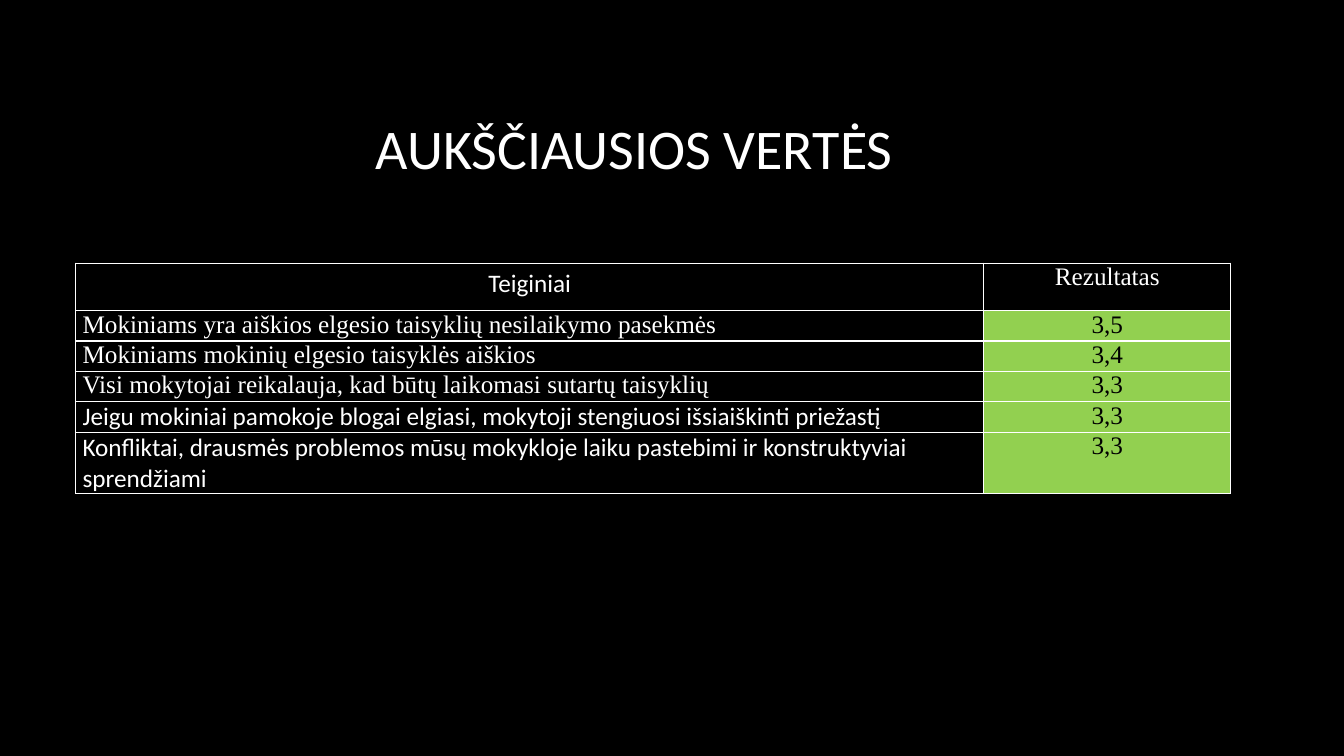
from lxml import etree
from pptx import Presentation
from pptx.dml.color import RGBColor
from pptx.enum.text import MSO_ANCHOR, PP_ALIGN
from pptx.oxml.ns import qn
from pptx.util import Pt

LEFT, CENTER = PP_ALIGN.LEFT, PP_ALIGN.CENTER
TOP, MIDDLE = MSO_ANCHOR.TOP, MSO_ANCHOR.MIDDLE

BLACK = RGBColor(0x00, 0x00, 0x00)
WHITE = RGBColor(0xFF, 0xFF, 0xFF)
GREEN = RGBColor(0x92, 0xD0, 0x50)

SANS, SERIF = "Calibri", "Times New Roman"

# Statement, its font, result, row height
RESULTS = [
    ("Mokiniams yra aiškios elgesio taisyklių nesilaikymo pasekmės", SERIF, "3,5", 19.9),
    ("Mokiniams mokinių elgesio taisyklės aiškios", SERIF, "3,4", 19.9),
    ("Visi mokytojai reikalauja, kad būtų laikomasi sutartų taisyklių", SERIF, "3,3", 19.9),
    ("Jeigu mokiniai pamokoje blogai elgiasi, mokytoji stengiuosi išsiaiškinti priežastį",
     SANS, "3,3", 21.9),
    ("Konfliktai, drausmės problemos mūsų mokykloje laiku pastebimi ir konstruktyviai "
     "sprendžiami", SANS, "3,3", 43.9),
]
HEADER_HEIGHT = 34
COLUMN_WIDTHS = (648.75, 176.5)


def write_text(text_frame, text, *, font=SANS, size=18, color=WHITE, align=LEFT):
    paragraph = text_frame.paragraphs[0]
    paragraph.alignment = align
    run = paragraph.add_run()
    run.text = text
    run.font.name = font
    run.font.size = Pt(size)
    run.font.color.rgb = color


class SlideBuilder:
    def __init__(self, slide, border_color=WHITE, border_width=1):
        self.slide = slide
        self.border_color = border_color
        self.border_width = border_width

    def background(self, color):
        fill = self.slide.background.fill
        fill.solid()
        fill.fore_color.rgb = color

    def title(self, text, left, top, width, height):
        shape = self.slide.shapes.add_textbox(Pt(left), Pt(top), Pt(width), Pt(height))
        text_frame = shape.text_frame
        text_frame.word_wrap = True
        text_frame.vertical_anchor = MIDDLE
        write_text(text_frame, text, size=40, align=CENTER)

    def table(self, left, top, column_widths, row_heights):
        shape = self.slide.shapes.add_table(
            len(row_heights), len(column_widths), Pt(left), Pt(top),
            Pt(sum(column_widths)), Pt(sum(row_heights)))
        table = shape.table
        table.first_row = table.horz_banding = False
        for column, width in zip(table.columns, column_widths):
            column.width = Pt(width)
        for row, height in zip(table.rows, row_heights):
            row.height = Pt(height)
        return table

    def cell(self, cell, text, *, fill=None, margins=(5, 0), **text_format):
        cell.margin_left = cell.margin_right = Pt(margins[0])
        cell.margin_top = cell.margin_bottom = Pt(margins[1])
        cell.vertical_anchor = TOP
        self.borders(cell)
        if fill is None:
            cell.fill.background()
        else:
            cell.fill.solid()
            cell.fill.fore_color.rgb = fill
        write_text(cell.text_frame, text, **text_format)

    def borders(self, cell):
        properties = cell._tc.get_or_add_tcPr()
        for side in ("a:lnL", "a:lnR", "a:lnT", "a:lnB"):
            line = etree.SubElement(properties, qn(side), w=str(Pt(self.border_width)))
            solid_fill = etree.SubElement(line, qn("a:solidFill"))
            etree.SubElement(solid_fill, qn("a:srgbClr"), val=str(self.border_color))


def main():
    presentation = Presentation()
    presentation.slide_width, presentation.slide_height = Pt(960), Pt(540)
    slide = presentation.slides.add_slide(presentation.slide_layouts[6])
    builder = SlideBuilder(slide)

    # Background and title
    builder.background(BLACK)
    builder.title("AUKŠČIAUSIOS VERTĖS", 54, 48, 798, 114.5)

    # Table header
    row_heights = [HEADER_HEIGHT] + [height for *_, height in RESULTS]
    table = builder.table(54, 188, COLUMN_WIDTHS, row_heights)
    builder.cell(table.cell(0, 0), "Teiginiai", margins=(7.2, 3.6), align=CENTER)
    builder.cell(table.cell(0, 1), "Rezultatas", font=SERIF, align=CENTER)

    # Statements and results
    for row, (statement, font, result, _) in enumerate(RESULTS, start=1):
        builder.cell(table.cell(row, 0), statement, font=font)
        builder.cell(table.cell(row, 1), result, fill=GREEN, font=SERIF,
                     color=BLACK, align=CENTER)

    presentation.save("out.pptx")


if __name__ == "__main__":
    main()
